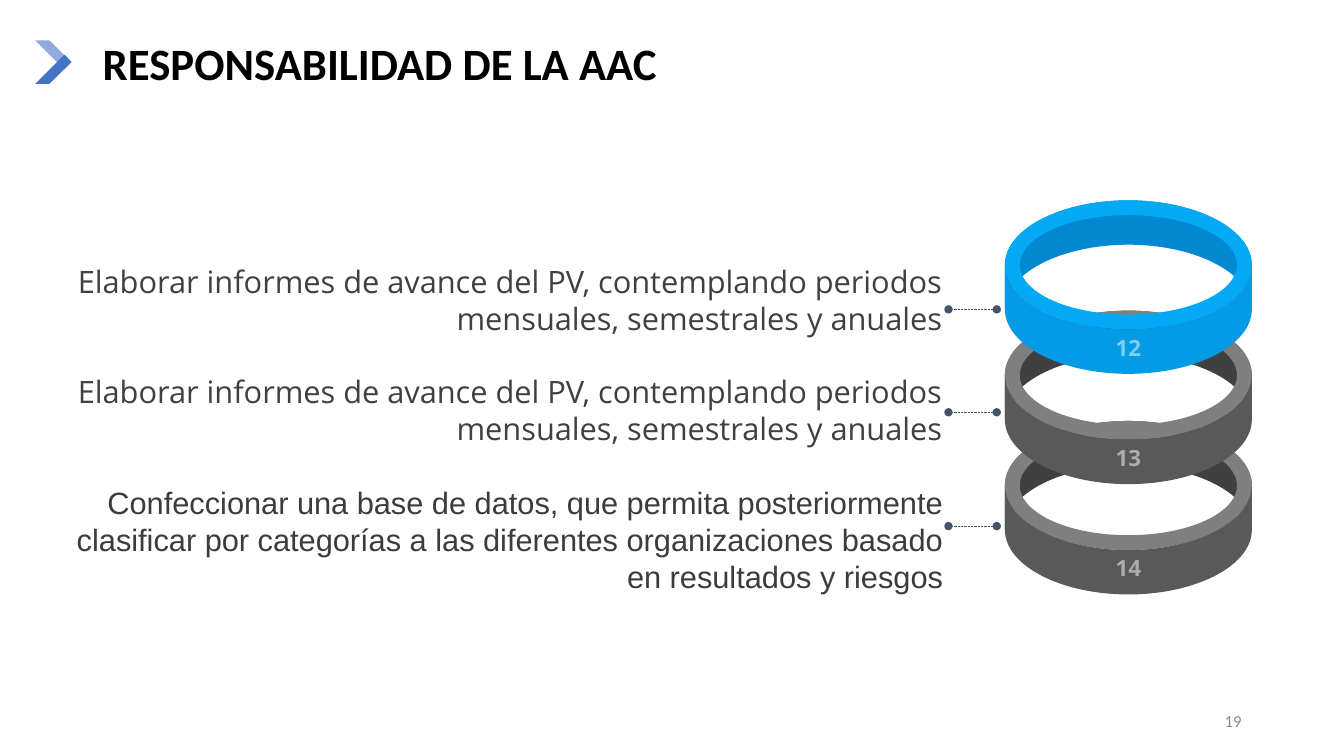
from lxml import etree
from pptx import Presentation
from pptx.dml.color import RGBColor
from pptx.enum.dml import MSO_LINE
from pptx.enum.shapes import MSO_CONNECTOR, MSO_SHAPE
from pptx.enum.text import MSO_ANCHOR, PP_ALIGN
from pptx.oxml.ns import qn
from pptx.util import Pt

LEFT, CENTER, RIGHT = PP_ALIGN.LEFT, PP_ALIGN.CENTER, PP_ALIGN.RIGHT
TOP, MIDDLE = MSO_ANCHOR.TOP, MSO_ANCHOR.MIDDLE
STRAIGHT, DONUT = MSO_CONNECTOR.STRAIGHT, MSO_SHAPE.DONUT
DASH = MSO_LINE.SQUARE_DOT

RING_PITCH = 78.8
ARC = 0.55  # handle length of a quarter-ellipse curve, relative to the radius
REPORTS = ("Elaborar informes de avance del PV, contemplando periodos "
           "mensuales, semestrales y anuales")
DATABASE = ("Confeccionar una base de datos, que permita posteriormente "
            "clasificar por categorías a las diferentes organizaciones "
            "basado en resultados y riesgos")
GREY = ("404040", "7F7F7F", "595959")  # back wall, rim, front wall
BLUE = ("0288D1", "03A9F5", "039BE6")
# text, font, text colour, left, top, height
ITEMS = [
    (REPORTS, "Open Sans", "404040", 35.4, 183.6, 61),
    (REPORTS, "Open Sans", "404040", 35.4, 262.1, 61),
    (DATABASE, "Arial", "3C3C3C", 36, 341.3, 88),
]
RINGS = [("12", BLUE), ("13", GREY), ("14", GREY)]
LEADERS = [221, 294.5, 375.8]


def rgb(color):
    return RGBColor.from_string(color)


def paint(sp, color):
    sp.shadow.inherit = False
    sp.fill.solid()
    sp.fill.fore_color.rgb = rgb(color)
    sp.line.fill.background()


def write(sp, text, size, font, color, align, anchor=TOP, bold=False, inset=None):
    tf = sp.text_frame
    tf.word_wrap = True
    tf.vertical_anchor = anchor
    if inset is not None:
        tf.margin_left = tf.margin_right = Pt(inset)
        tf.margin_top = tf.margin_bottom = Pt(inset)
    p = tf.paragraphs[0]
    p.text = text
    p.alignment = align
    p.font.size = Pt(size)
    p.font.name = font
    p.font.bold = bold
    p.font.color.rgb = rgb(color)
    return p


def add_text(s, x, y, w, h, *args, **kwargs):
    sp = s.shapes.add_textbox(Pt(x), Pt(y), Pt(w), Pt(h))
    return write(sp, *args, **kwargs)


def add_outline(s, points, color, curves=()):
    """Draw a closed outline; curves lists the first segment of each Bézier triple."""
    points = [(Pt(x), Pt(y)) for x, y in points]
    builder = s.shapes.build_freeform(*points[0])
    builder.add_line_segments(points[1:], close=True)
    sp = builder.convert_to_shape()
    paint(sp, color)
    segments = list(sp._element.iter(qn("a:lnTo")))
    for start in curves:
        curve = etree.Element(qn("a:cubicBezTo"))
        segments[start].addprevious(curve)
        for segment in segments[start:start + 3]:
            curve.append(segment[0])
            segment.getparent().remove(segment)


def add_header(s, x, y, w, h):
    # Chevron: the lower arm mirrors the upper one
    arm = [(0, 0), (20.9, 20.9), (25.9, 15.6), (10.1, 0)]
    top, height = y + 28.8, 31.1
    add_outline(s, [(x + a, top + b) for a, b in arm], "8FAADC")
    add_outline(s, [(x + a, top + height - b) for a, b in arm], "4472C4")
    # Title
    sp = s.shapes.title
    sp.left, sp.top, sp.width, sp.height = Pt(x + 41), Pt(y), Pt(w - 41), Pt(h)
    p = write(sp, "RESPONSABILIDAD DE LA AAC", 32, "Calibri", "000000",
              LEFT, MIDDLE, bold=True)
    p.line_spacing = 0.9


def add_wall(s, x, y, w, h, depth, side, color):
    """Half an ellipse (side -1: back, 1: front) extended down by depth."""
    units = [(1, 0), (1, ARC), (ARC, 1), (0, 1), (-ARC, 1), (-1, ARC), (-1, 0)]
    arc = [(x + w / 2 * (1 + a), y + h / 2 * (1 + side * b)) for a, b in units]
    lower = [(px, py + depth) for px, py in reversed(arc)]
    add_outline(s, arc + lower, color, curves=(0, 3, 7, 10))


def add_ring(s, x, y, w, h, label, colors):
    back, rim, front = colors
    depth = 31.7
    add_wall(s, x, y, w, h, depth, -1, back)
    sp = s.shapes.add_shape(DONUT, Pt(x), Pt(y), Pt(w), Pt(h))
    sp.adjustments[0] = 0.115
    paint(sp, rim)
    add_wall(s, x, y, w, h, depth, 1, front)
    # Half-transparent number on the front wall
    p = add_text(s, x, y + 93, w, 24, label, 16, "Open Sans", "FFFFFF",
                 CENTER, MIDDLE, bold=True, inset=0)
    clr = p._p.find(".//" + qn("a:srgbClr"))
    etree.SubElement(clr, qn("a:alpha"), val="50000")


def add_rings(s, x, y, w, h):
    # Bottom ring first, so that each one covers the ring below
    for i, (label, colors) in reversed(list(enumerate(RINGS))):
        add_ring(s, x, y + i * RING_PITCH, w, h, label, colors)


def add_items(s, w):
    for text, font, color, x, y, h in ITEMS:
        add_text(s, x, y, w, h, text, 22, font, color, RIGHT, inset=4.3)


def add_leader(s, x1, x2, y):
    c = s.shapes.add_connector(STRAIGHT, Pt(x1), Pt(y), Pt(x2), Pt(y))
    c.line.color.rgb = rgb("44546A")
    c.line.width = Pt(0.25)
    c.line.dash_style = DASH
    ln = c.line._get_or_add_ln()
    for end in ("a:headEnd", "a:tailEnd"):
        etree.SubElement(ln, qn(end), type="oval")
    etree.SubElement(c._element.spPr, qn("a:effectLst"))


def main():
    prs = Presentation()
    prs.slide_width, prs.slide_height = Pt(960), Pt(540)
    s = prs.slides.add_slide(prs.slide_layouts[5])
    add_header(s, 25.2, 0, 869, 95)
    # Slide number
    add_text(s, 678, 500.4, 216, 28.8, "19", 12, "Calibri", "8C8C8C", RIGHT, MIDDLE)
    add_items(s, 642)
    add_rings(s, 717.8, 143.1, 176.4, 92.2)
    for y in LEADERS:
        add_leader(s, 712, 677.5, y)
    prs.save("out.pptx")


if __name__ == "__main__":
    main()
